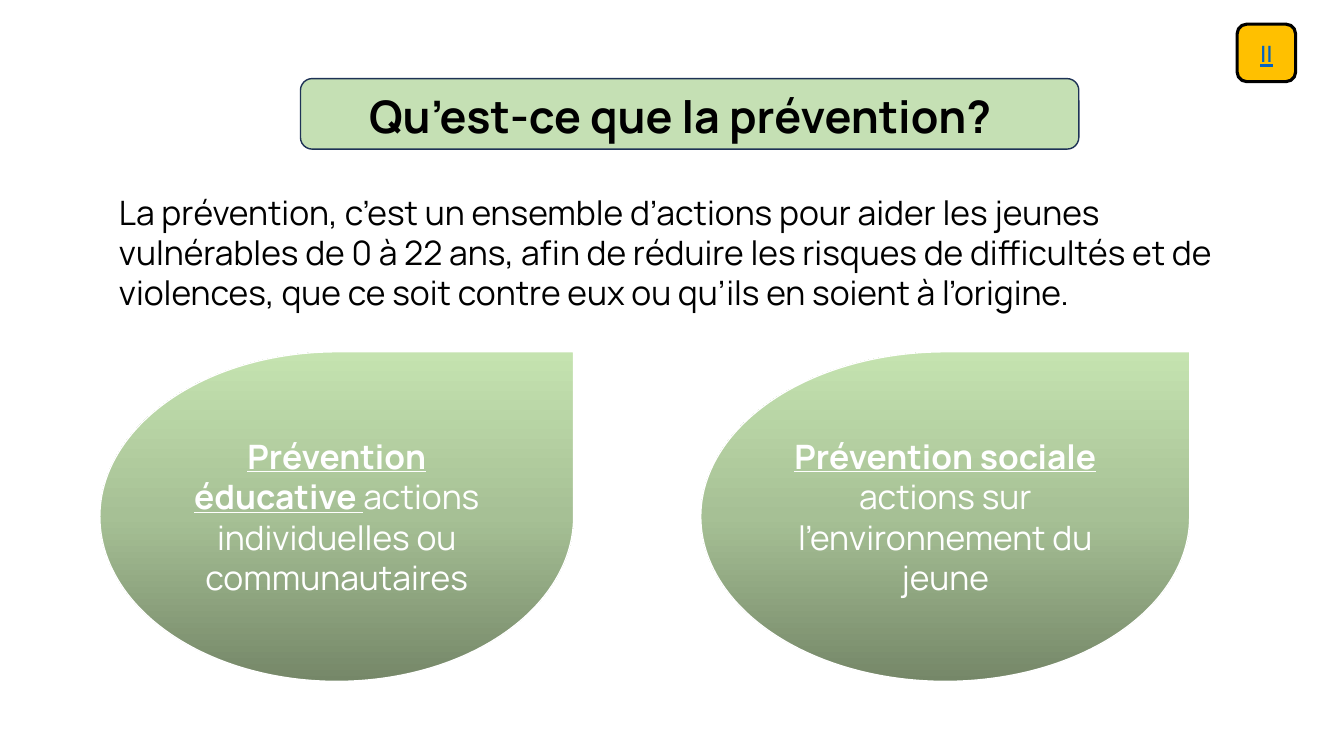
import copy

import pptx
import pptx.dml.color
import pptx.enum.shapes
import pptx.enum.text
import pptx.oxml
import pptx.oxml.ns
import pptx.util

Inches, Pt = pptx.util.Inches, pptx.util.Pt
SHAPES = pptx.enum.shapes.MSO_SHAPE
ALIGN = pptx.enum.text.PP_ALIGN
ANCHOR = pptx.enum.text.MSO_ANCHOR
COLORS = {
    "black": "000000", "white": "FFFFFF", "banner": "C5E0B4", "navy": "1E3256",
    "amber": "FFC000", "link": "0563C1",
    "drop bottom": "758768", "drop middle": "A6C095", "drop top": "C5E3B0",
}


def rgb(name):
    return pptx.dml.color.RGBColor.from_string(COLORS[name])


def add_outlined(preset, box, line, width):
    """Add a shadowless shape with an outline and centred text."""
    shape = slide.shapes.add_shape(preset, *map(Inches, box))
    shape.shadow.inherit = False
    shape.line.color.rgb = rgb(line)
    shape.line.width = Pt(width)
    shape.text_frame.vertical_anchor = ANCHOR.MIDDLE
    shape.text_frame.paragraphs[0].alignment = ALIGN.CENTER
    return shape


deck = pptx.Presentation()
deck.slide_width, deck.slide_height = Inches(13.33), Inches(7.5)
slide = deck.slides.add_slide(deck.slide_layouts[1])

# Title and definition
title, definition = slide.shapes.title, slide.placeholders[1]
for holder, box, text, size, bold in [
    (title, (3.56, 0.83, 6.79, 0.64), "Qu’est-ce que la prévention?", 32, True),
    (definition, (1.08, 1.85, 11.18, 1.32),
     "La prévention, c’est un ensemble d’actions pour aider les jeunes "
     "vulnérables de 0 à 22 ans, afin de réduire les risques de difficultés et de "
     "violences, que ce soit contre eux ou qu’ils en soient à l’origine.", 24, False),
]:
    holder.left, holder.top, holder.width, holder.height = map(Inches, box)
    frame = holder.text_frame
    frame.text = text
    frame.word_wrap = True
    frame.auto_size = pptx.enum.text.MSO_AUTO_SIZE.NONE
    frame.vertical_anchor = ANCHOR.TOP
    paragraph = frame.paragraphs[0]
    properties = paragraph._p.get_or_add_pPr()
    properties.set("marL", "0")
    properties.set("indent", "0")
    properties.append(pptx.oxml.parse_xml(
        f'<a:buNone {pptx.oxml.ns.nsdecls("a")}/>'))
    paragraph.alignment = ALIGN.LEFT
    paragraph.space_before = Pt(0)
    paragraph.font.name = "Manrope"
    paragraph.font.size = Pt(size)
    paragraph.font.bold = bold
    paragraph.font.color.rgb = rgb("black")

# Banner, placed behind the title
banner = add_outlined(SHAPES.ROUNDED_RECTANGLE, (2.98, 0.78, 7.72, 0.7), "navy", 1)
banner.fill.solid()
banner.fill.fore_color.rgb = rgb("banner")
title._element.addprevious(banner._element)

# The two kinds of prevention
for left, width, kind, actions in [
    (0.99, 4.7, "Prévention éducative ", "actions individuelles ou communautaires"),
    (6.95, 4.85, "Prévention sociale ", "actions sur l’environnement du jeune"),
]:
    drop = add_outlined(SHAPES.TEAR, (left, 3.49, width, 3.27), "white", 1)
    drop.fill.gradient()
    drop.fill.gradient_angle = 90
    stop_list = drop._element.spPr.find(".//" + pptx.oxml.ns.qn("a:gsLst"))
    stop_list.insert(1, copy.deepcopy(stop_list[0]))
    levels = [(0, "drop bottom"), (0.5, "drop middle"), (1, "drop top")]
    for stop, (position, color) in zip(drop.fill.gradient_stops, levels):
        stop.position = position
        stop.color.rgb = rgb(color)
    paragraph = drop.text_frame.paragraphs[0]
    paragraph.font.name = "Manrope"
    paragraph.font.size = Pt(24)
    paragraph.font.color.rgb = rgb("white")
    for text, strong in [(kind, True), (actions, False)]:
        run = paragraph.add_run()
        run.text = text
        run.font.bold = run.font.underline = strong

# Section marker
section = add_outlined(SHAPES.ROUNDED_RECTANGLE, (12.27, 0.24, 0.58, 0.57), "black", 2.25)
section.fill.solid()
section.fill.fore_color.rgb = rgb("amber")
section.text_frame.text = "II"
numeral = section.text_frame.paragraphs[0]
numeral.alignment = ALIGN.CENTER
numeral.font.name = "Calibri"
numeral.font.size = Pt(18)
numeral.font.underline = True
numeral.font.color.rgb = rgb("link")

deck.save("out.pptx")
